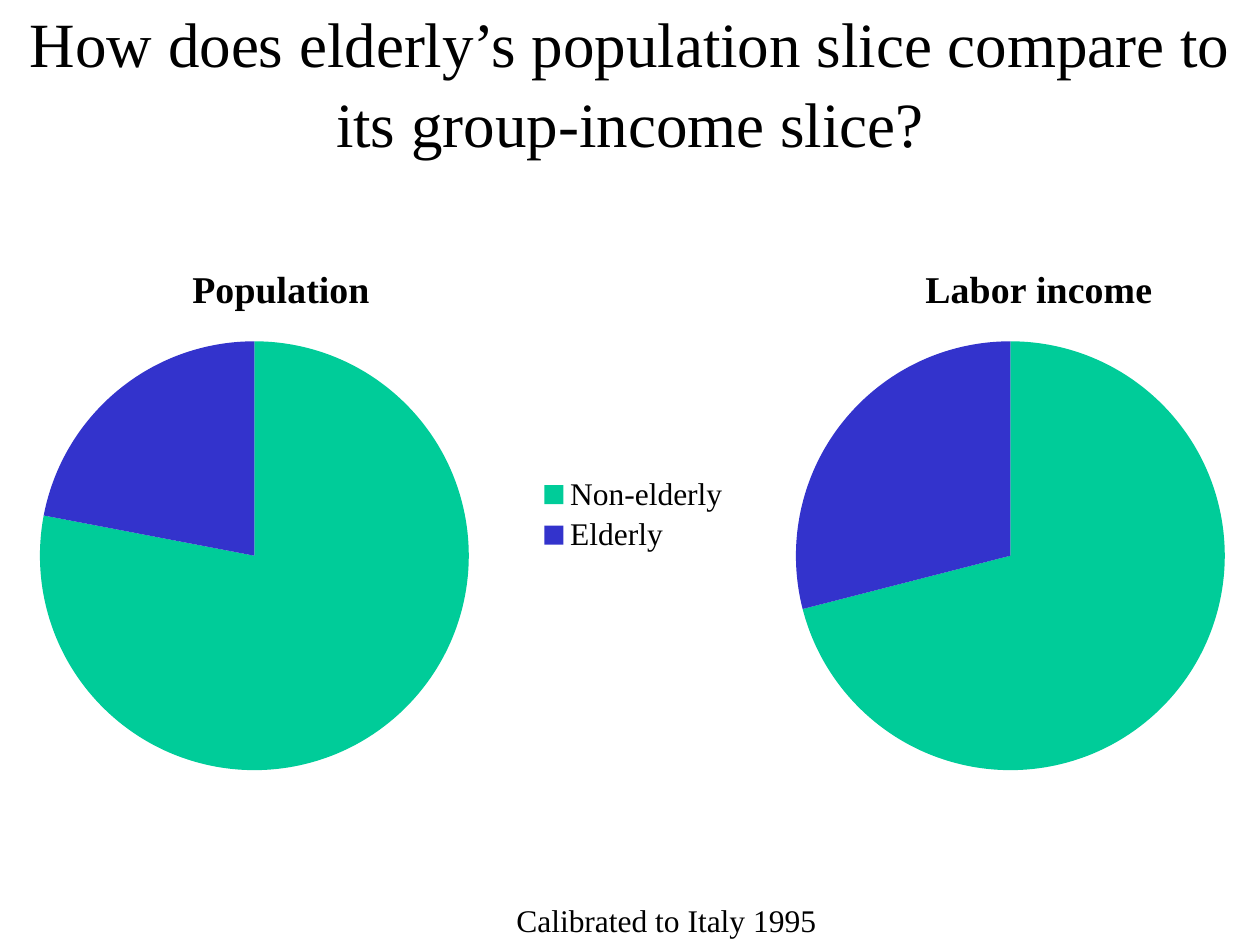
from lxml import etree
from pptx import Presentation
from pptx.chart.data import CategoryChartData
from pptx.dml.color import RGBColor
from pptx.enum.chart import XL_CHART_TYPE, XL_LEGEND_POSITION
from pptx.enum.text import MSO_ANCHOR, PP_ALIGN
from pptx.oxml.ns import qn
from pptx.util import Cm, Pt

PIE = XL_CHART_TYPE.PIE
RIGHT = XL_LEGEND_POSITION.RIGHT
MIDDLE = MSO_ANCHOR.MIDDLE
CENTER, LEFT = PP_ALIGN.CENTER, PP_ALIGN.LEFT

COLORS = {"text": "000000", "Non-elderly": "00CC99", "Elderly": "3333CC"}
FACE = "Times New Roman"


def style(font, size, bold=False):
    form = {"name": FACE, "size": Pt(size), "bold": bold}
    for key, val in form.items():
        setattr(font, key, val)
    font.color.rgb = RGBColor.from_string(COLORS["text"])


def place(node, index, **spots):
    """Give a chart part a manual layout in shares of the chart."""
    for old in node.findall(qn("c:layout")):
        node.remove(old)
    layout = etree.Element(qn("c:layout"))
    manual = etree.SubElement(layout, qn("c:manualLayout"))
    for tag, val in spots.items():
        etree.SubElement(manual, qn("c:" + tag)).set("val", str(val))
    node.insert(index, layout)


deck = Presentation()
deck.slide_width, deck.slide_height = Cm(25.4), Cm(19.05)
slide = deck.slides.add_slide(deck.slide_layouts[6])

# Pies: the shared legend stands between them
groups = ["Non-elderly", "Elderly"]
pies = [
    ("Population", [78, 22], -0.43, True),
    ("Labor income", [71, 29], 14.81, False),
]
for name, vals, left, keyed in pies:
    data = CategoryChartData()
    data.categories = groups
    data.add_series(name, vals)
    frame = slide.shapes.add_chart(
        PIE, Cm(left), Cm(4.88), Cm(15.44), Cm(11), data)
    chart = frame.chart
    style(chart.font, 18)

    # Heading
    chart.has_title = True
    head = chart.chart_title
    head.include_in_layout = False
    head.text_frame.text = name
    style(head.text_frame.paragraphs[0].runs[0].font, 21.6, True)
    start = 0.27 if keyed else 0.24
    place(head.text_frame._txBody.getparent().getparent(), 1,
          xMode="edge", yMode="edge", x=start, y=0.03)

    # Slices
    plot = chart.plots[0]
    plot.vary_by_categories = True
    for i, group in enumerate(groups):
        look = plot.series[0].points[i].format
        look.fill.solid()
        look.fill.fore_color.rgb = RGBColor.from_string(COLORS[group])
        look.line.fill.background()
    area = chart._chartSpace.find(".//" + qn("c:plotArea"))
    place(area, 0, layoutTarget="inner", xMode="edge", yMode="edge",
          x=0.08, y=0.18, w=0.56, h=0.79)

    # Legend
    chart.has_legend = keyed
    if keyed:
        chart.legend.position = RIGHT
        chart.legend.include_in_layout = False
        style(chart.legend.font, 18)
        key = chart._chartSpace.find(".//" + qn("c:legend"))
        place(key, 1, xMode="edge", yMode="edge",
              x=0.73, y=0.42, w=0.25, h=0.16)

# Title and note
texts = [
    ("How does elderly’s population slice compare to its group-income slice?",
     (0, 0.03, 25.4, 3.18), 36,
     {"word_wrap": True, "vertical_anchor": MIDDLE},
     {"alignment": CENTER, "line_spacing": 1.05}),
    ("Calibrated to Italy 1995",
     (10.16, 18.03, 6.63, 1.02), 18,
     {"word_wrap": False}, {"alignment": LEFT}),
]
for words, box, size, frame_form, para_form in texts:
    body = slide.shapes.add_textbox(*map(Cm, box)).text_frame
    body.text = words
    para = body.paragraphs[0]
    for part, form in ((body, frame_form), (para, para_form)):
        for key, val in form.items():
            setattr(part, key, val)
    style(para.runs[0].font, size)

deck.save("out.pptx")
